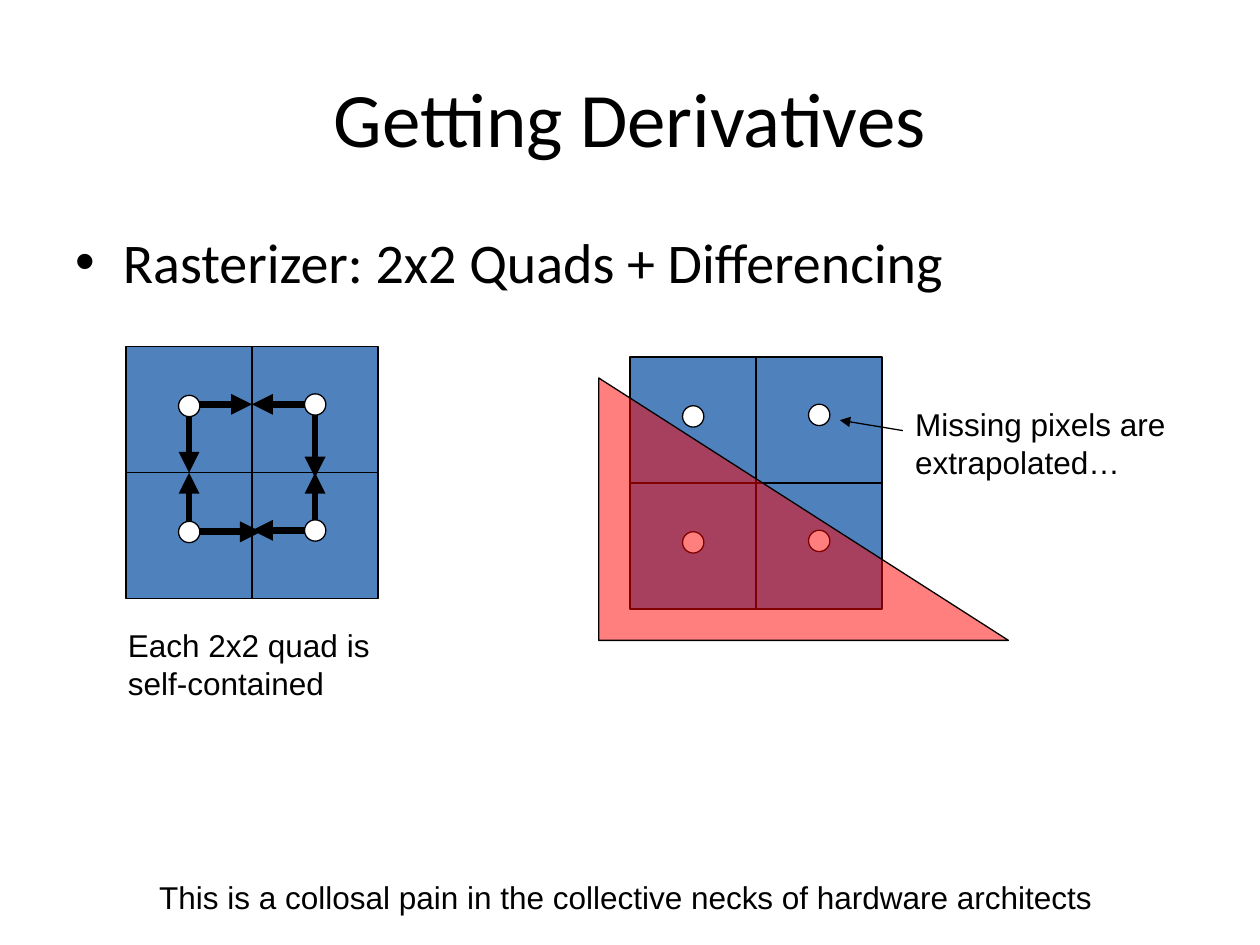
from dataclasses import dataclass

from lxml import etree
from pptx import Presentation
from pptx import util as u
from pptx.dml.color import RGBColor
from pptx.enum import shapes, text
from pptx.oxml import ns


@dataclass(frozen=True)
class Theme:
    ink: str = "000000"
    cell: str = "4F81BD"
    dot: str = "FFFFFF"
    cover: str = "FF0000"
    head: str = "Calibri"
    body: str = "Arial"
    title: float = 44
    list: float = 32
    note: float = 18
    thin: float = 0.75
    bold: float = 4


# All lengths below are centimetres.
@dataclass(frozen=True)
class Box:
    x: float
    y: float
    w: float
    h: float

    def lengths(self) -> list:
        return [u.Cm(v) for v in (self.x, self.y, self.w, self.h)]


@dataclass(frozen=True)
class Arrow:
    x1: float
    y1: float
    x2: float
    y2: float
    width: float = Theme.bold


@dataclass(frozen=True)
class Note:
    words: str
    box: Box


THEME = Theme()
CELL = 2.54
DOT = 0.43
DOT_X = 1.06
DOT_Y = (0.98, 0.95)  # left and right column
GRID = [(row, col) for row in range(2) for col in range(2)]

LEFT = (2.54, 6.99)
RIGHT = (12.7, 7.2)
COVER = Box(12.07, 7.62, 8.26, 5.29)

STEPS = [
    Arrow(3.81, 8.15, 5.08, 8.15),
    Arrow(3.99, 10.72, 5.26, 10.72),
    Arrow(3.81, 10.69, 3.81, 9.53),
    Arrow(6.35, 10.69, 6.35, 9.53),
    Arrow(3.81, 8.15, 3.81, 9.53),
    Arrow(6.35, 8.26, 6.35, 9.63),
    Arrow(6.35, 10.69, 5.08, 10.69),
    Arrow(6.35, 8.15, 5.08, 8.15),
]
POINTER = Arrow(18.2, 8.68, 16.93, 8.47, Theme.thin)

NOTES = [
    Note("Each 2x2 quad is self-contained", Box(2.33, 12.49, 5.93, 1.78)),
    Note("Missing pixels are extrapolated…", Box(18.2, 8.04, 5.93, 1.78)),
    Note("This is a collosal pain in the collective necks of hardware architects",
         Box(2.96, 17.57, 20.32, 1.02)),
]


def rgb(code: str) -> RGBColor:
    return RGBColor.from_string(code)


def write(frame, words: str, font: str, size: float) -> None:
    run = frame.paragraphs[0].add_run()
    run.text = words
    run.font.name = font
    run.font.size = u.Pt(size)
    run.font.color.rgb = rgb(THEME.ink)


def fill_holder(holder, box: Box, words: str, size: float) -> None:
    holder.left, holder.top, holder.width, holder.height = box.lengths()
    write(holder.text_frame, words, THEME.head, size)


def draw_shape(slide, kind, box: Box, color: str):
    shape = slide.shapes.add_shape(kind, *box.lengths())
    shape.shadow.inherit = False
    shape.fill.solid()
    shape.fill.fore_color.rgb = rgb(color)
    shape.line.color.rgb = rgb(THEME.ink)
    shape.line.width = u.Pt(THEME.thin)
    return shape


def draw_cells(slide, origin: tuple[float, float]) -> None:
    x, y = origin
    for row, col in GRID:
        box = Box(x + col * CELL, y + row * CELL, CELL, CELL)
        draw_shape(slide, shapes.MSO_SHAPE.RECTANGLE, box, THEME.cell)


def draw_dots(slide, origin: tuple[float, float]) -> None:
    x, y = origin
    for row, col in GRID:
        box = Box(x + col * CELL + DOT_X, y + row * CELL + DOT_Y[col], DOT, DOT)
        draw_shape(slide, shapes.MSO_SHAPE.OVAL, box, THEME.dot)


def draw_cover(slide) -> None:
    """Draw the half-transparent triangle over the right quad."""
    shape = draw_shape(slide, shapes.MSO_SHAPE.RIGHT_TRIANGLE, COVER, THEME.cover)
    color = shape.fill._xPr.find(".//" + ns.qn("a:srgbClr"))
    etree.SubElement(color, ns.qn("a:alpha"), val="50000")


def draw_arrow(slide, arrow: Arrow) -> None:
    ends = [u.Cm(v) for v in (arrow.x1, arrow.y1, arrow.x2, arrow.y2)]
    line = slide.shapes.add_connector(shapes.MSO_CONNECTOR.STRAIGHT, *ends)
    line.line.color.rgb = rgb(THEME.ink)
    line.line.width = u.Pt(arrow.width)
    etree.SubElement(line.line._get_or_add_ln(), ns.qn("a:tailEnd"), type="triangle")
    etree.SubElement(line._element.spPr, ns.qn("a:effectLst"))


def draw_note(slide, note: Note) -> None:
    frame = slide.shapes.add_textbox(*note.box.lengths()).text_frame
    frame.word_wrap = True
    frame.auto_size = text.MSO_AUTO_SIZE.SHAPE_TO_FIT_TEXT
    write(frame, note.words, THEME.body, THEME.note)


def main() -> None:
    deck = Presentation()
    deck.slide_width, deck.slide_height = u.Cm(25.4), u.Cm(19.05)
    slide = deck.slides.add_slide(deck.slide_layouts[1])

    title, body = slide.placeholders
    fill_holder(title, Box(1.27, 0.76, 22.86, 3.18), "Getting Derivatives", THEME.title)
    fill_holder(body, Box(1.27, 4.45, 22.86, 12.57),
                "Rasterizer: 2x2 Quads + Differencing", THEME.list)

    draw_cells(slide, LEFT)
    for step in STEPS:
        draw_arrow(slide, step)
    draw_dots(slide, LEFT)

    draw_cells(slide, RIGHT)
    draw_dots(slide, RIGHT)
    draw_cover(slide)
    draw_arrow(slide, POINTER)

    for note in NOTES:
        draw_note(slide, note)
    deck.save("out.pptx")


if __name__ == "__main__":
    main()
